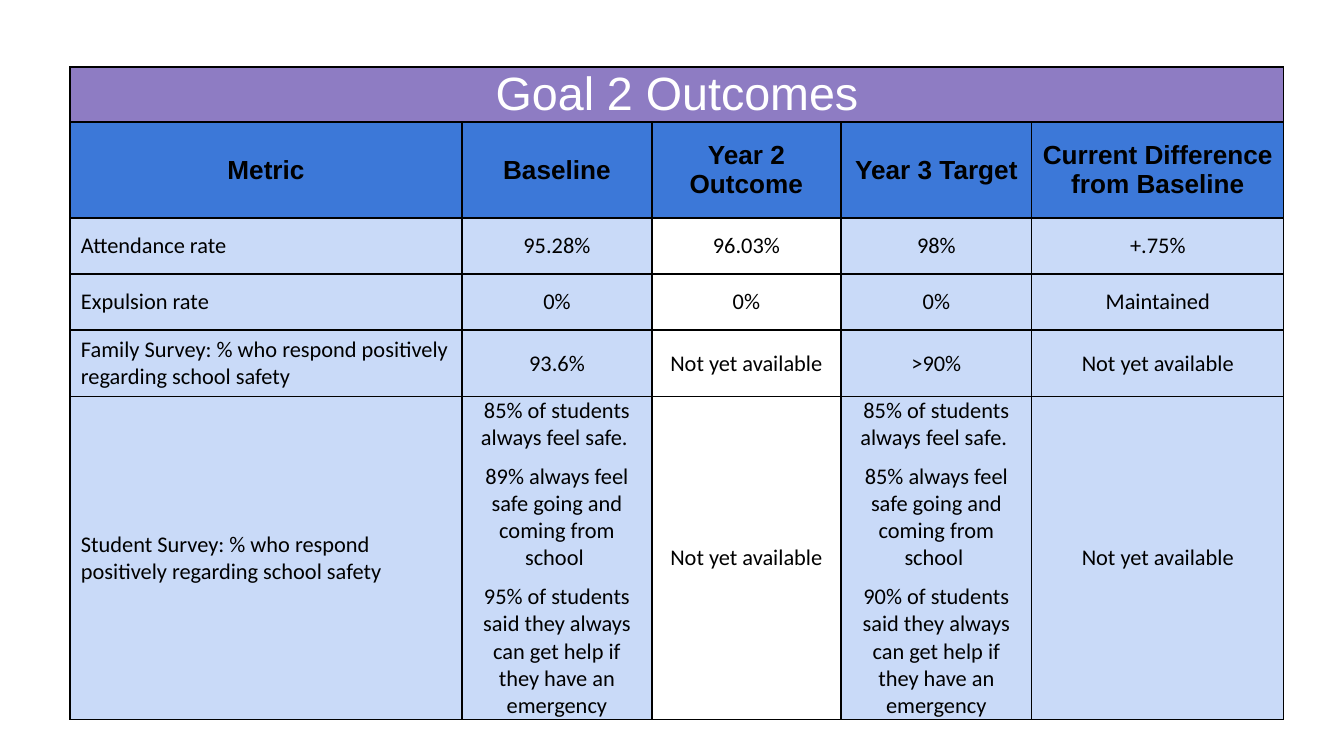
from dataclasses import dataclass

import lxml.etree
import pptx
import pptx.dml.color
import pptx.enum.text
import pptx.oxml.ns
import pptx.table
import pptx.util

EMU_PER_PX = 914400 / 134.4
SLIDE_WIDTH, SLIDE_HEIGHT = 1344, 756
TABLE_LEFT, TABLE_TOP = 70, 67
COLUMN_WIDTHS = (392, 190, 189, 191, 252)
ROW_HEIGHTS = (55, 96, 56, 56, 67, 323)
OUTCOME_COLUMN = 2
BORDER_COLOUR = "000000"
BORDER_POINTS = 0.75


@dataclass(frozen=True)
class CellStyle:
    fill: str
    font: str
    size: int
    colour: str = "000000"
    bold: bool = False
    centred: bool = True
    space_after: int = 0


BANNER = CellStyle("8E7CC3", "Arial", 25, "FFFFFF")
HEADER = CellStyle("3C78D8", "Arial", 14, bold=True)
METRIC = CellStyle("C9DAF8", "Calibri", 12, centred=False, space_after=6)
VALUE = CellStyle("C9DAF8", "Calibri", 12)
OUTCOME = CellStyle("FFFFFF", "Calibri", 12)

PENDING = "Not yet available"


def survey_answers(going_and_coming: str, getting_help: str) -> str:
    """Return the three student answers, one a line."""
    return "\n".join((
        "85% of students always feel safe. ",
        f"{going_and_coming} always feel safe going and coming from school ",
        f"{getting_help} of students said they always can get help if they have an emergency",
    ))


HEADINGS = ("Metric", "Baseline", "Year 2 Outcome", "Year 3 Target",
            "Current Difference from Baseline")
METRIC_ROWS = (
    ("Attendance rate", "95.28%", "96.03%", "98%", "+.75%"),
    ("Expulsion rate", "0%", "0%", "0%", "Maintained"),
    ("Family Survey: % who respond positively regarding school safety",
     "93.6%", PENDING, ">90%", PENDING),
    ("Student Survey: % who respond positively regarding school safety",
     survey_answers("89%", "95%"), PENDING, survey_answers("85%", "90%"), PENDING),
)


def px(length: int) -> pptx.util.Emu:
    return pptx.util.Emu(round(length * EMU_PER_PX))


def rgb(colour: str) -> pptx.dml.color.RGBColor:
    return pptx.dml.color.RGBColor.from_string(colour)


def set_attributes(target: object, values: dict) -> None:
    for name, value in values.items():
        setattr(target, name, value)


def add_borders(cell: pptx.table._Cell) -> None:
    """Line all four sides; call before the fill, which must follow in the XML."""
    properties = cell._tc.get_or_add_tcPr()
    for side in ("lnL", "lnR", "lnT", "lnB"):
        line = lxml.etree.SubElement(properties, pptx.oxml.ns.qn(f"a:{side}"),
                                     w=str(pptx.util.Pt(BORDER_POINTS)))
        fill = lxml.etree.SubElement(line, pptx.oxml.ns.qn("a:solidFill"))
        lxml.etree.SubElement(fill, pptx.oxml.ns.qn("a:srgbClr"), val=BORDER_COLOUR)


def format_cell(cell: pptx.table._Cell, style: CellStyle) -> None:
    add_borders(cell)
    cell.fill.solid()
    cell.fill.fore_color.rgb = rgb(style.fill)
    set_attributes(cell, {
        "margin_left": px(11), "margin_right": px(11),
        "margin_top": 0, "margin_bottom": 0,
        "vertical_anchor": pptx.enum.text.MSO_ANCHOR.MIDDLE,
    })


def write_cell(cell: pptx.table._Cell, text: str, style: CellStyle) -> None:
    cell.text = text
    paras = cell.text_frame.paragraphs
    alignment = pptx.enum.text.PP_ALIGN
    for number, para in enumerate(paras):
        closes_list = number > 0 and number == len(paras) - 1
        set_attributes(para, {
            "alignment": alignment.CENTER if style.centred else alignment.LEFT,
            "space_before": pptx.util.Pt(6 if number else 0),
            "space_after": pptx.util.Pt(6 if closes_list else style.space_after),
        })
        for span in para.runs:
            set_attributes(span.font, {
                "name": style.font, "size": pptx.util.Pt(style.size), "bold": style.bold,
            })
            span.font.color.rgb = rgb(style.colour)


def style_for(row: int, column: int) -> CellStyle:
    if row < 2:
        return (BANNER, HEADER)[row]
    if column == 0:
        return METRIC
    return OUTCOME if column == OUTCOME_COLUMN else VALUE


def main() -> None:
    deck = pptx.Presentation()
    set_attributes(deck, {"slide_width": px(SLIDE_WIDTH), "slide_height": px(SLIDE_HEIGHT)})
    page = deck.slides.add_slide(deck.slide_layouts.get_by_name("Blank"))

    table = page.shapes.add_table(
        len(ROW_HEIGHTS), len(COLUMN_WIDTHS), px(TABLE_LEFT), px(TABLE_TOP),
        px(sum(COLUMN_WIDTHS)), px(sum(ROW_HEIGHTS))).table
    set_attributes(table, {"first_row": False, "horz_banding": False})
    for column, width in zip(table.columns, COLUMN_WIDTHS):
        column.width = px(width)
    for row, height in zip(table.rows, ROW_HEIGHTS):
        row.height = px(height)

    for row in range(len(ROW_HEIGHTS)):
        for column in range(len(COLUMN_WIDTHS)):
            format_cell(table.cell(row, column), style_for(row, column))

    table.cell(0, 0).merge(table.cell(0, len(COLUMN_WIDTHS) - 1))
    for row, texts in enumerate((("Goal 2 Outcomes",), HEADINGS, *METRIC_ROWS)):
        for column, text in enumerate(texts):
            write_cell(table.cell(row, column), text, style_for(row, column))

    deck.save("out.pptx")


if __name__ == "__main__":
    main()
